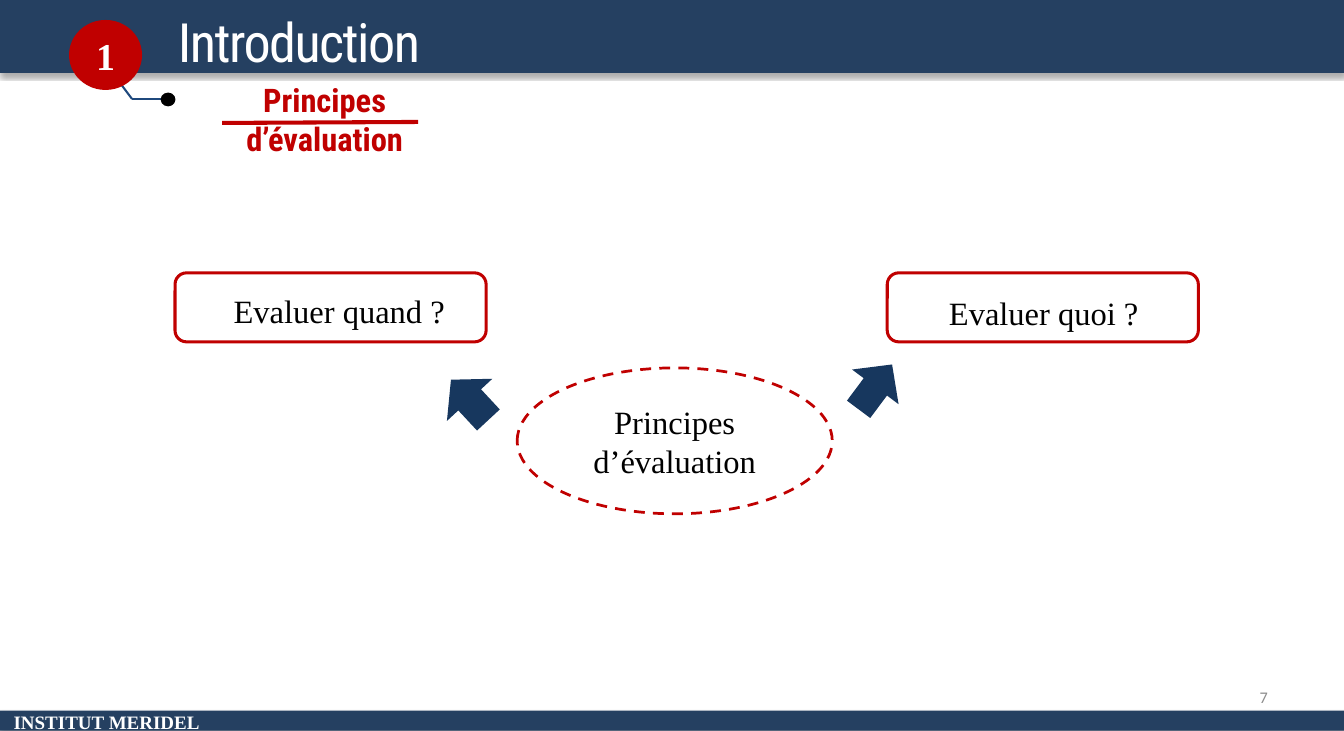
from lxml.etree import SubElement
from pptx import Presentation
from pptx.dml.color import RGBColor
from pptx.enum.dml import MSO_LINE_DASH_STYLE as Dash
from pptx.enum.shapes import MSO_CONNECTOR as Link, MSO_SHAPE as Shape
from pptx.enum.text import MSO_ANCHOR as Anchor, MSO_AUTO_SIZE as AutoSize, PP_ALIGN as Align
from pptx.oxml.ns import qn
from pptx.util import Inches, Pt

NAVY = RGBColor(0x25, 0x40, 0x61)
ARROW_BLUE = RGBColor(0x17, 0x37, 0x5E)
LINK_BLUE = RGBColor(0x1F, 0x49, 0x7D)
RED = RGBColor(0xC0, 0x00, 0x00)
GREY = RGBColor(0x8C, 0x8C, 0x8C)
BLACK = RGBColor(0, 0, 0)
WHITE = RGBColor(0xFF, 0xFF, 0xFF)

SERIF, CONDENSED, SANS = "Times New Roman", "Roboto Condensed", "Calibri"
PX = 914400 / 97.5


def emu(*lengths):
    return [round(length * PX) for length in lengths]


def write(box, text, size=24, font=SERIF, color=BLACK, bold=False, align=Align.LEFT,
          anchor=Anchor.TOP, wrap=True, inset=None, spacing=None):
    frame = box.text_frame
    frame.auto_size = AutoSize.NONE
    frame.word_wrap = wrap
    frame.vertical_anchor = anchor
    if inset is not None:
        frame.margin_left = frame.margin_top = frame.margin_right = frame.margin_bottom = inset
    para = frame.paragraphs[0]
    para.alignment = align
    span = para.add_run()
    span.text = text
    span.font.name, span.font.size = font, Pt(size)
    span.font.bold, span.font.color.rgb = bold, color
    if spacing is not None:
        span.font._element.set("spc", str(round(spacing * 100)))


class Canvas:
    def __init__(self, page):
        self.page = page

    def shape(self, kind, *area, fill=None, line=None, width=2, dash=None, rotation=0):
        box = self.page.shapes.add_shape(kind, *emu(*area))
        box.shadow.inherit = False
        box.rotation = rotation
        if fill is None:
            box.fill.background()
        else:
            box.fill.solid()
            box.fill.fore_color.rgb = fill
        if line is None:
            box.line.fill.background()
        else:
            box.line.color.rgb, box.line.width = line, Pt(width)
            if dash:
                box.line.dash_style = dash
        return box

    def band(self, top, height):
        """Draw a full-width navy bar with a soft shadow below it."""
        bar = self.shape(Shape.RECTANGLE, 0, top, 1344, height, fill=NAVY)
        effects = bar.element.spPr.find(qn("a:effectLst"))
        shadow = SubElement(effects, qn("a:outerShdw"), blurRad=str(Pt(3.5)),
                            dist=str(Pt(2.2)), dir="5400000", rotWithShape="0")
        tint = SubElement(shadow, qn("a:srgbClr"), val="000000")
        SubElement(tint, qn("a:alpha"), val="32000")

    def line(self, *ends, color, width):
        link = self.page.shapes.add_connector(Link.STRAIGHT, *emu(*ends))
        link.line.color.rgb, link.line.width = color, Pt(width)
        SubElement(link.element.spPr, qn("a:effectLst"))

    def label(self, text, *area, **style):
        write(self.page.shapes.add_textbox(*emu(*area)), text, **style)

    def title(self, text, *area, **style):
        box = self.page.shapes.title
        box.left, box.top, box.width, box.height = emu(*area)
        box.element.getparent().append(box.element)
        write(box, text, **style)


def main():
    deck = Presentation()
    deck.slide_width, deck.slide_height = Inches(13.78), Inches(7.5)
    canvas = Canvas(deck.slides.add_slide(deck.slide_layouts[5]))

    canvas.band(711, 20)
    canvas.label("INSTITUT MERIDEL", 4, 706, 204, 25, size=14, color=WHITE, bold=True, wrap=False)
    canvas.band(0, 73)

    canvas.shape(Shape.LEFT_ARROW, 442, 369, 55, 62, fill=ARROW_BLUE, rotation=47.1)
    canvas.shape(Shape.LEFT_ARROW, 847, 358, 56, 58, fill=ARROW_BLUE, rotation=126.7)
    for left in (175, 887):
        canvas.shape(Shape.ROUNDED_RECTANGLE, left, 273, 311, 69, line=RED, width=2.25)
    canvas.label("Evaluer quand ?", 224, 286, 234, 49)
    canvas.label("Evaluer quoi ?", 939, 288, 259, 49)

    topic = canvas.shape(Shape.OVAL, 517, 368, 315, 146, fill=WHITE, line=RED, dash=Dash.DASH)
    write(topic, "Principes d’évaluation", align=Align.CENTER, anchor=Anchor.MIDDLE)

    canvas.line(132, 99, 120, 83, color=LINK_BLUE, width=1.5)
    canvas.line(162, 99, 132, 99, color=LINK_BLUE, width=1.5)
    canvas.shape(Shape.OVAL, 162, 94, 12, 11, fill=BLACK, line=BLACK)
    canvas.label("Principes d’évaluation", 179, 75, 291, 85, font=CONDENSED, color=RED,
                 bold=True, align=Align.CENTER)
    canvas.line(418, 122, 222, 123, color=RED, width=3)

    badge = canvas.shape(Shape.OVAL, 69, 20, 73, 70, fill=RED)
    write(badge, "1", size=28, color=WHITE, bold=True, align=Align.CENTER,
          anchor=Anchor.MIDDLE, inset=0)
    canvas.title("Introduction", 168, 3, 417, 80, size=40, font=CONDENSED, color=WHITE,
                 spacing=-1.1)
    canvas.label("7", 963, 678, 314, 39, size=12, font=SANS, color=GREY, align=Align.RIGHT,
                 anchor=Anchor.MIDDLE)

    deck.save("out.pptx")


if __name__ == "__main__":
    main()
